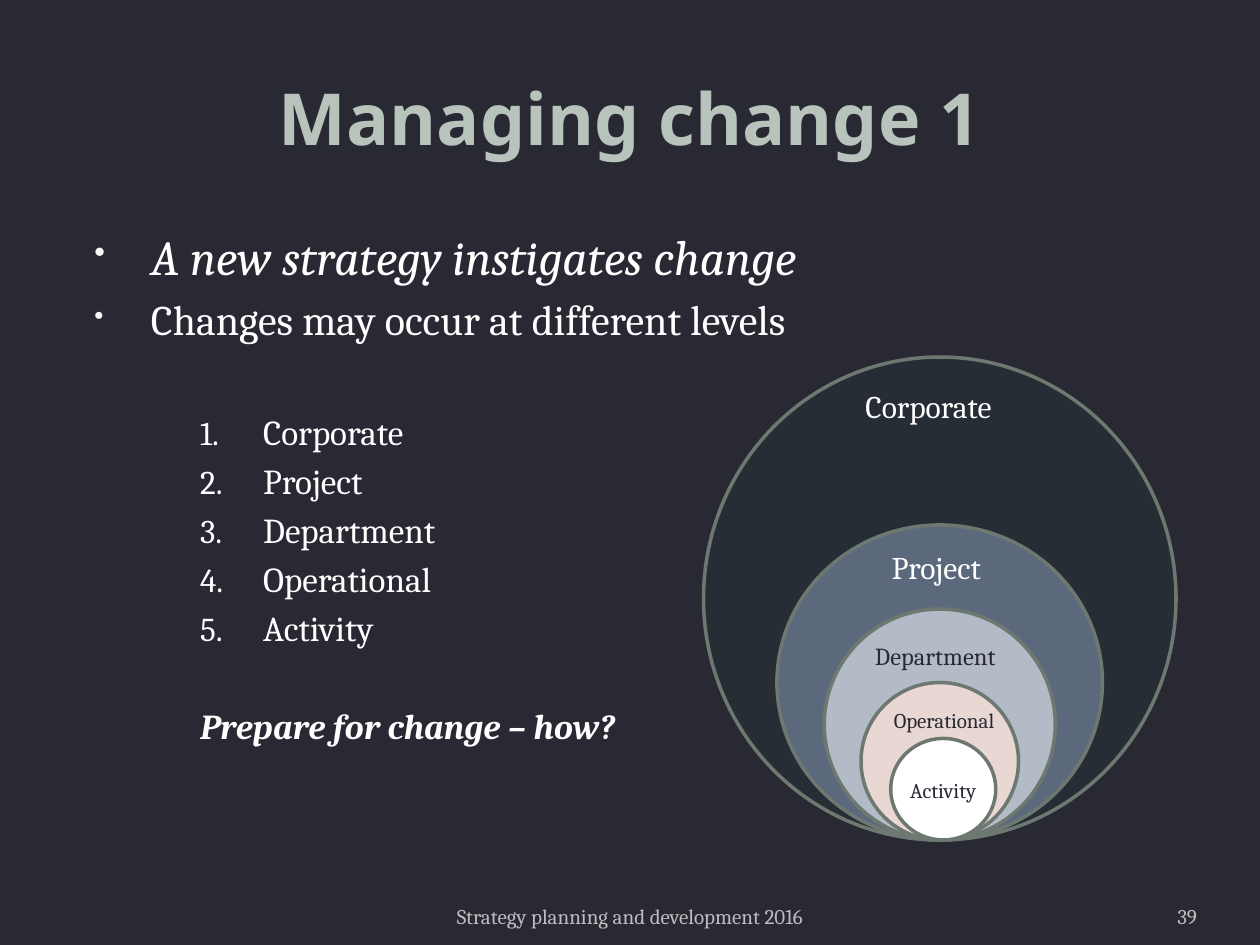
import pptx
import pptx.util
import pptx.dml.color
import pptx.enum.shapes
import pptx.enum.text
import pptx.oxml
import pptx.oxml.ns

Pt = pptx.util.Pt
RGBColor = pptx.dml.color.RGBColor
ALIGN = pptx.enum.text.PP_ALIGN
ANCHOR = pptx.enum.text.MSO_ANCHOR

NIGHT = RGBColor(0x29, 0x29, 0x34)
SAGE = RGBColor(0xB7, 0xC3, 0xBB)
WHITE = RGBColor(0xFF, 0xFF, 0xFF)
BULLET = RGBColor(0xF9, 0xF9, 0xF9)
FOOTER = RGBColor(0xBD, 0xBD, 0xBD)
RING = RGBColor(0x6D, 0x78, 0x71)
CORPORATE = RGBColor(0x26, 0x2D, 0x35)
PROJECT = RGBColor(0x5C, 0x69, 0x7C)
DEPARTMENT = RGBColor(0xB3, 0xBB, 0xC6)
OPERATIONAL = RGBColor(0xE9, 0xD7, 0xD3)

LEVELS = ["Corporate", "Project", "Department", "Operational", "Activity"]
CIRCLE_BOTTOM = 480
LABEL_WIDTH = 100


def write(paragraph, text, size, color, font="Cambria", **styles):
    run = paragraph.add_run()
    run.text = text
    run.font.color.rgb = color
    for name, value in {"name": font, "size": Pt(size), **styles}.items():
        setattr(run.font, name, value)


def add_text_frame(slide, left, top, width, height, **settings):
    box = slide.shapes.add_textbox(Pt(left), Pt(top), Pt(width), Pt(height))
    for name, value in {"word_wrap": True, **settings}.items():
        setattr(box.text_frame, name, value)
    return box.text_frame


def add_line(slide, place, text, size, color, align, styles=None, **settings):
    paragraph = add_text_frame(slide, *place, **settings).paragraphs[0]
    paragraph.alignment = align
    write(paragraph, text, size, color, **(styles or {}))


def format_item(paragraph, margin, indent, before, level=0):
    paragraph.level = level
    paragraph.space_before = Pt(before)
    properties = paragraph._p.get_or_add_pPr()
    properties.set("marL", str(Pt(margin)))
    properties.set("indent", str(Pt(indent)))


def add_marker(paragraph, color, percent, tag, **attributes):
    def append(parent, name, **values):
        child = pptx.oxml.parse_xml(f"<a:{name} {pptx.oxml.ns.nsdecls('a')}/>")
        for key, value in values.items():
            child.set(key, value)
        parent.append(child)
        return child

    properties = paragraph._p.get_or_add_pPr()
    append(append(properties, "buClr"), "srgbClr", val=str(color))
    append(properties, "buSzPct", val=str(percent * 1000))
    append(properties, tag, **attributes)


def add_body(slide):
    body = add_text_frame(slide, 36, 126, 648, 370.8)
    statements = [("A new strategy instigates change", 28, True),
                  ("Changes may occur at different levels", 24, False)]
    for index, (text, size, italic) in enumerate(statements):
        statement = body.add_paragraph() if index else body.paragraphs[0]
        format_item(statement, 43.2, -32.4, size * 0.2)
        add_marker(statement, BULLET, 65, "buChar", char="•")
        write(statement, text, size, WHITE, italic=italic)
    for index, text in enumerate(LEVELS):
        level = body.add_paragraph()
        format_item(level, 107.3, -36, 4 if index else 38, level=1)
        add_marker(level, WHITE, 95, "buAutoNum", type="arabicPeriod")
        write(level, text, 20, WHITE)
    question = body.add_paragraph()
    format_item(question, 71.3, 0, 32, level=1)
    write(question, "Prepare for change – how?", 20, WHITE, bold=True, italic=True)


def add_circle(slide, center, width, height, fill):
    circle = slide.shapes.add_shape(
        pptx.enum.shapes.MSO_SHAPE.OVAL, Pt(center - width / 2),
        Pt(CIRCLE_BOTTOM - height), Pt(width), Pt(height))
    circle.shadow.inherit = False
    circle.fill.solid()
    circle.fill.fore_color.rgb = fill
    circle.line.color.rgb = RING
    circle.line.width = Pt(2)


def add_level_circles(slide):
    circles = [(537, 270, 276, CORPORATE), (537, 186, 180, PROJECT),
               (537, 132, 132, DEPARTMENT), (537, 90, 90, OPERATIONAL),
               (539, 60, 58, WHITE)]
    for circle in circles:
        add_circle(slide, *circle)
    labels = [(537.5, 217.5, 18, WHITE, ALIGN.LEFT),
              (535, 309.5, 18, WHITE, ALIGN.CENTER),
              (534.5, 363, 14, NIGHT, ALIGN.CENTER),
              (539.5, 400.5, 12, NIGHT, ALIGN.CENTER),
              (539, 440.5, 12, NIGHT, ALIGN.CENTER)]
    for text, (center, top, size, color, align) in zip(LEVELS, labels):
        place = (center - LABEL_WIDTH / 2, top, LABEL_WIDTH, size * 1.2 + 7.2)
        add_line(slide, place, text, size, color, align)


def main():
    deck = pptx.Presentation()
    deck.slide_width, deck.slide_height = Pt(720), Pt(540)
    slide = deck.slides.add_slide(deck.slide_layouts[6])
    slide.background.fill.solid()
    slide.background.fill.fore_color.rgb = NIGHT

    add_line(slide, (36, 21.6, 648, 90), "Managing change 1", 41, SAGE, ALIGN.CENTER,
             {"font": "Noto Sans", "bold": True}, vertical_anchor=ANCHOR.MIDDLE)
    add_body(slide)
    add_level_circles(slide)
    add_line(slide, (246, 505.5, 228, 28.8), "Strategy planning and development 2016",
             12, FOOTER, ALIGN.CENTER, vertical_anchor=ANCHOR.BOTTOM)
    add_line(slide, (624, 505.5, 60, 28.8), "39", 12, FOOTER, ALIGN.RIGHT,
             vertical_anchor=ANCHOR.BOTTOM, margin_left=0, margin_right=0)
    deck.save("out.pptx")


if __name__ == "__main__":
    main()
